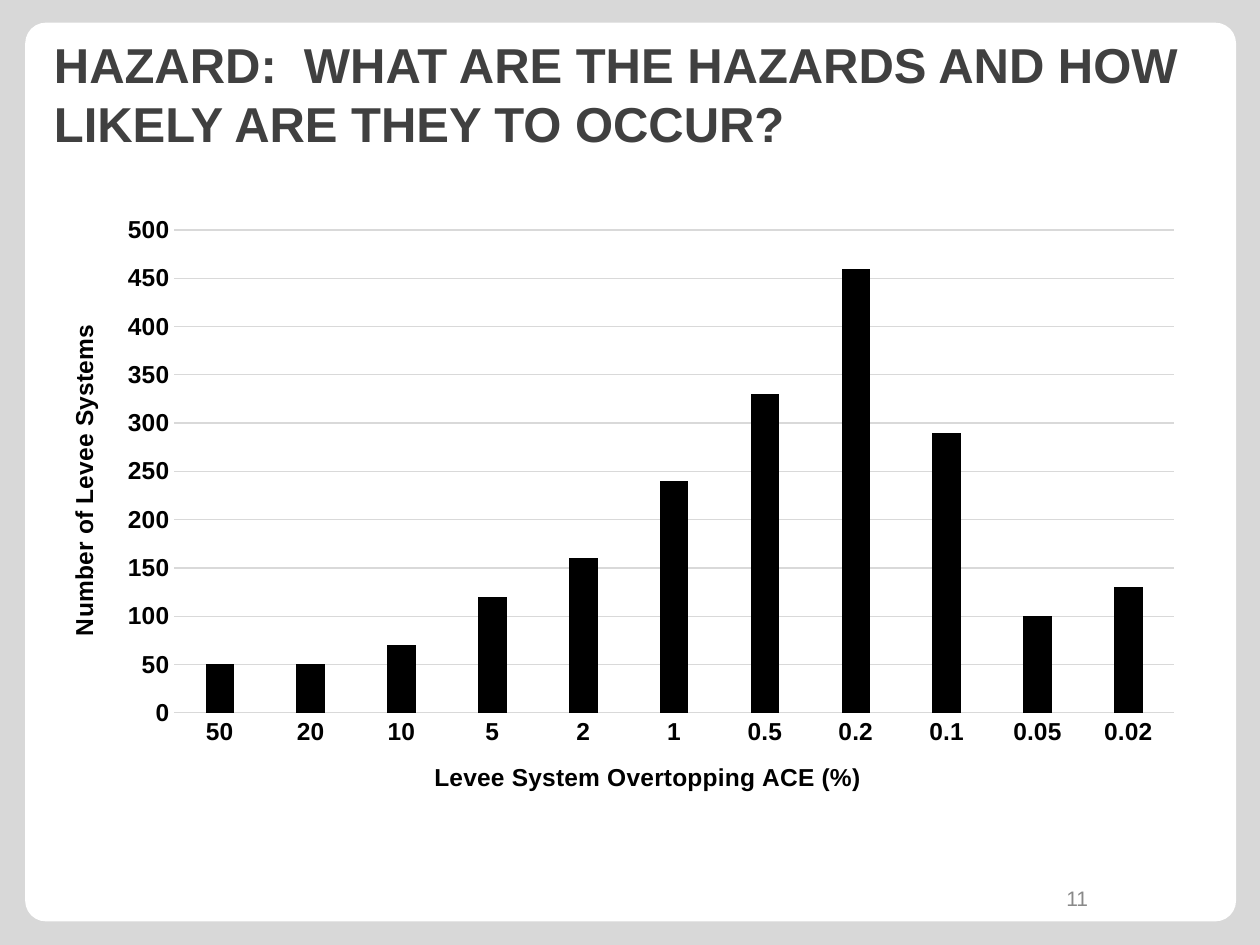
from lxml import etree
from pptx import Presentation, util as u
from pptx.chart import data as chart_data
from pptx.dml.color import RGBColor
from pptx.enum import chart as charts, shapes, text
from pptx.oxml import ns

WIDTH, HEIGHT = 10, 7.5
MARGIN, CONTENT_WIDTH = 0.033, 0.917  # shares of the slide's width
GREY_LINE = "D9D9D9"

LEVEES_BY_ACE = {
    "50": 50, "20": 50, "10": 70, "5": 120, "2": 160, "1": 240,
    "0.5": 330, "0.2": 460, "0.1": 290, "0.05": 100, "0.02": 130,
}


def colour(hex_code):
    return RGBColor.from_string(hex_code)


def area(left, top, width, height):
    """Turn shares of the slide's size into lengths."""
    return [u.Inches(share * size) for share, size in
            zip((left, top, width, height), (WIDTH, HEIGHT) * 2)]


def style_font(font, size, hex_code="000000", bold=True):
    font.name = "Arial"
    font.size = u.Pt(size)
    font.bold = bold
    font.color.rgb = colour(hex_code)


def style_line(line, hex_code):
    line.color.rgb = colour(hex_code)
    line.width = u.Pt(0.75)


def add_panel(page):
    panel = page.shapes.add_shape(
        shapes.MSO_SHAPE.ROUNDED_RECTANGLE, *area(0.02, 0.024, 0.961, 0.951))
    panel.adjustments[0] = 0.023
    panel.shadow.inherit = False
    panel.fill.solid()
    panel.fill.fore_color.rgb = colour("FFFFFF")
    panel.line.fill.background()


def add_text(page, place, words, size, hex_code, bold=False,
             align=text.PP_ALIGN.LEFT):
    frame = page.shapes.add_textbox(*area(*place)).text_frame
    frame.word_wrap = True
    frame.vertical_anchor = text.MSO_ANCHOR.MIDDLE
    para = frame.paragraphs[0]
    para.text = words
    para.alignment = align
    style_font(para.font, size, hex_code, bold)


def set_layout(parent, index, **values):
    """Place a chart part by shares of the chart's size."""
    for old in parent.findall(ns.qn("c:layout")):
        parent.remove(old)
    layout = etree.Element(ns.qn("c:layout"))
    manual = etree.SubElement(layout, ns.qn("c:manualLayout"))
    for name, value in values.items():
        etree.SubElement(manual, ns.qn(f"c:{name}"), val=str(value))
    parent.insert(index, layout)


def style_axis(axis, title, left, top):
    axis.major_tick_mark = axis.minor_tick_mark = charts.XL_TICK_MARK.NONE
    style_font(axis.tick_labels.font, 14)
    para = axis.axis_title.text_frame.paragraphs[0]
    para.text = title
    style_font(para.font, 14)
    set_layout(axis.axis_title._element, 1,
               xMode="edge", yMode="edge", x=left, y=top)


def add_levee_chart(page):
    levees = chart_data.CategoryChartData()
    levees.categories = list(LEVEES_BY_ACE)
    levees.add_series("Series 1", list(LEVEES_BY_ACE.values()))
    chart = page.shapes.add_chart(
        charts.XL_CHART_TYPE.COLUMN_CLUSTERED,
        *area(MARGIN, 0.216, CONTENT_WIDTH, 0.651), levees).chart
    chart.has_legend = chart.has_title = False
    style_font(chart.font, 10, bold=False)

    plot = chart.plots[0]
    plot.gap_width, plot.overlap = 219, -27
    plot.vary_by_categories = False
    columns = plot.series[0].format.fill
    columns.solid()
    columns.fore_color.rgb = colour("000000")

    ace, count = chart.category_axis, chart.value_axis
    style_axis(ace, "Levee System Overtopping ACE (%)", 0.336, 0.898)
    style_axis(count, "Number of Levee Systems", 0.019, 0.188)
    style_line(ace.format.line, GREY_LINE)
    count.minimum_scale, count.maximum_scale, count.major_unit = 0, 500, 50
    count.format.line.fill.background()
    style_line(count.major_gridlines.format.line, GREY_LINE)
    set_layout(chart._chartSpace.chart.plotArea, 0, layoutTarget="inner",
               xMode="edge", yMode="edge", x=0.115, y=0.042, w=0.865, h=0.785)


def main():
    deck = Presentation()
    deck.slide_width, deck.slide_height = u.Inches(WIDTH), u.Inches(HEIGHT)
    page = deck.slides.add_slide(deck.slide_layouts[6])
    page.background.fill.solid()
    page.background.fill.fore_color.rgb = colour("D8D8D8")
    add_panel(page)
    add_text(page, (MARGIN, 0.04, CONTENT_WIDTH, 0.117),
             "HAZARD:  WHAT ARE THE HAZARDS AND HOW LIKELY ARE THEY TO OCCUR?",
             28, "404040", bold=True)
    add_text(page, (0.815, 0.924, 0.08, 0.053), "11", 12, "898989",
             align=text.PP_ALIGN.CENTER)
    add_levee_chart(page)
    deck.save("out.pptx")


if __name__ == "__main__":
    main()
